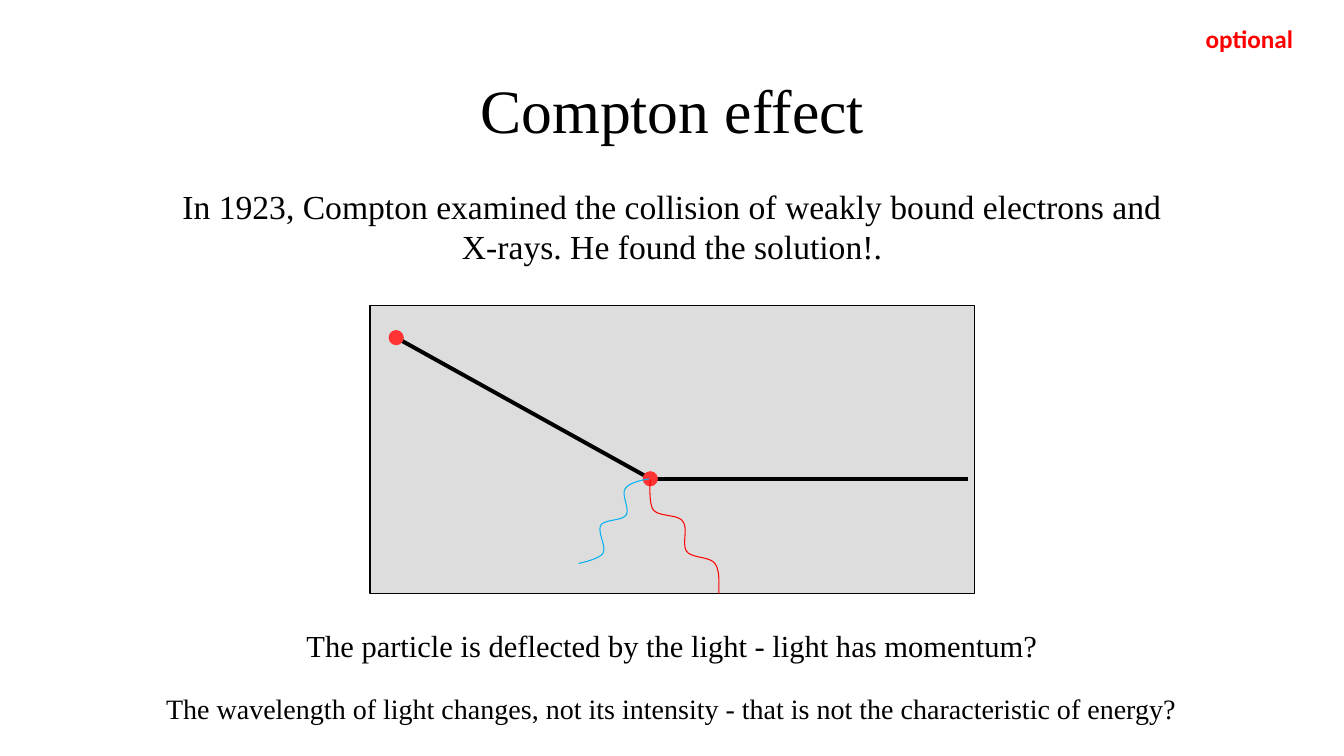
from dataclasses import dataclass

from lxml import etree
from pptx import Presentation
from pptx import util as u
from pptx.dml.color import RGBColor
from pptx.enum import shapes, text
from pptx.oxml.ns import qn

Inches = u.Inches
Point = tuple[float, float]

BLACK = RGBColor(0x00, 0x00, 0x00)
GREY = RGBColor(0xDD, 0xDD, 0xDD)
ELECTRON_RED = RGBColor(0xFF, 0x33, 0x33)
RED = RGBColor(0xFF, 0x00, 0x00)
BLUE = RGBColor(0x00, 0xB0, 0xF0)

SERIF = "Times New Roman"
THIN, THICK = u.Pt(0.75), u.Pt(2.83)
ELECTRON_SIZE = 0.14
STEPS_PER_CURVE = 12

START, COLLISION, END = (3.93, 3.35), (6.45, 4.75), (9.6, 4.75)


@dataclass(frozen=True)
class Wave:
    """A light wave: a start point, then three points for each Bézier curve."""
    color: RGBColor
    points: list[Point]


@dataclass(frozen=True)
class Label:
    words: str
    left: float
    top: float
    width: float
    height: float
    size: float
    font: str = SERIF
    color: RGBColor = BLACK
    bold: bool = False
    wrap: bool = False
    align: text.PP_ALIGN = text.PP_ALIGN.CENTER


WAVES = [
    Wave(BLUE, [(6.44, 4.75), (6.34, 4.77), (6.24, 4.79), (6.2, 4.85),
                (6.16, 4.91), (6.25, 5.05), (6.21, 5.11),
                (6.17, 5.17), (6, 5.15), (5.96, 5.21),
                (5.92, 5.28), (6.02, 5.42), (5.98, 5.49),
                (5.94, 5.55), (5.74, 5.59), (5.74, 5.59)]),
    Wave(RED, [(7.13, 5.89), (7.13, 5.77), (7.14, 5.66), (7.09, 5.59),
               (7.04, 5.52), (6.86, 5.54), (6.81, 5.47),
               (6.76, 5.4), (6.83, 5.24), (6.77, 5.17),
               (6.72, 5.1), (6.54, 5.13), (6.48, 5.06),
               (6.43, 4.99), (6.45, 4.76), (6.45, 4.76)]),
]

LABELS = [
    Label("The particle is deflected by the light - light has momentum?",
          2.92, 6.17, 7.5, 0.47, 21.8),
    Label("The wavelength of light changes, not its intensity - "
          "that is not the characteristic of energy?",
          1.52, 6.81, 10.28, 0.44, 20),
    Label("In 1923, Compton examined the collision of weakly bound electrons "
          "and X-rays. He found the solution!.",
          1.7, 1.79, 9.93, 0.91, 24, wrap=True),
    Label("optional", 11.86, 0.18, 1.08, 0.4, 18, font="Calibri", color=RED,
          bold=True, align=text.PP_ALIGN.LEFT),
]


def write(para, words: str, *, size: float, font: str = SERIF,
          color: RGBColor = BLACK, bold: bool = False,
          align: text.PP_ALIGN = text.PP_ALIGN.CENTER) -> None:
    para.alignment = align
    span = para.add_run()
    span.text = words
    span.font.size = u.Pt(size)
    span.font.name = font
    span.font.bold = bold
    span.font.color.rgb = color


def add_solid(page, kind: shapes.MSO_SHAPE, left: float, top: float,
              width: float, height: float, fill: RGBColor, line: RGBColor) -> None:
    shape = page.shapes.add_shape(kind, Inches(left), Inches(top),
                                  Inches(width), Inches(height))
    shape.shadow.inherit = False
    shape.fill.solid()
    shape.fill.fore_color.rgb = fill
    shape.line.color.rgb = line
    shape.line.width = THIN


def add_track(page, start: Point, end: Point) -> None:
    track = page.shapes.add_connector(shapes.MSO_CONNECTOR.STRAIGHT,
                                      *map(Inches, start + end))
    track.line.color.rgb = BLACK
    track.line.width = THICK
    etree.SubElement(track._element.spPr, qn("a:effectLst"))


def add_electron(page, center: Point) -> None:
    left, top = (value - ELECTRON_SIZE / 2 for value in center)
    add_solid(page, shapes.MSO_SHAPE.OVAL, left, top, ELECTRON_SIZE,
              ELECTRON_SIZE, ELECTRON_RED, ELECTRON_RED)


def trace(points: list[Point]) -> list[Point]:
    """Follow the Bézier curves in short straight steps."""
    traced = []
    for first in range(0, len(points) - 1, 3):
        corners = points[first:first + 4]
        for step in range(1, STEPS_PER_CURVE + 1):
            t = step / STEPS_PER_CURVE
            weights = ((1 - t) ** 3, 3 * t * (1 - t) ** 2,
                       3 * t ** 2 * (1 - t), t ** 3)
            x, y = (sum(w * value for w, value in zip(weights, axis))
                    for axis in zip(*corners))
            traced.append((Inches(x), Inches(y)))
    return traced


def add_wave(page, wave: Wave) -> None:
    builder = page.shapes.build_freeform(*map(Inches, wave.points[0]))
    builder.add_line_segments(trace(wave.points), close=False)
    curve = builder.convert_to_shape()
    curve.shadow.inherit = False
    curve.fill.background()
    curve.line.color.rgb = wave.color
    curve.line.width = THIN


def add_label(page, label: Label) -> None:
    box = page.shapes.add_textbox(Inches(label.left), Inches(label.top),
                                  Inches(label.width), Inches(label.height))
    frame = box.text_frame
    frame.word_wrap = label.wrap
    frame.auto_size = text.MSO_AUTO_SIZE.SHAPE_TO_FIT_TEXT
    write(frame.paragraphs[0], label.words, size=label.size, font=label.font,
          color=label.color, bold=label.bold, align=label.align)


def add_title(page, words: str) -> None:
    title = page.shapes.title
    title.left, title.top = Inches(0.92), Inches(0.4)
    title.width, title.height = Inches(11.5), Inches(1.45)
    frame = title.text_frame
    frame.auto_size = text.MSO_AUTO_SIZE.NONE
    frame.vertical_anchor = text.MSO_ANCHOR.MIDDLE
    frame.paragraphs[0].line_spacing = 0.9
    write(frame.paragraphs[0], words, size=44)


def main() -> None:
    deck = Presentation()
    deck.slide_width, deck.slide_height = Inches(13.33), Inches(7.5)
    page = deck.slides.add_slide(deck.slide_layouts.get_by_name("Title Only"))
    add_title(page, "Compton effect")

    # Collision diagram
    add_solid(page, shapes.MSO_SHAPE.RECTANGLE, 3.67, 3.03, 6, 2.86, GREY, BLACK)
    add_track(page, COLLISION, END)
    add_track(page, START, COLLISION)
    for center in (START, COLLISION):
        add_electron(page, center)
    for wave in WAVES:
        add_wave(page, wave)

    # Explanations and the corner mark
    for label in LABELS:
        add_label(page, label)

    deck.save("out.pptx")


if __name__ == "__main__":
    main()
